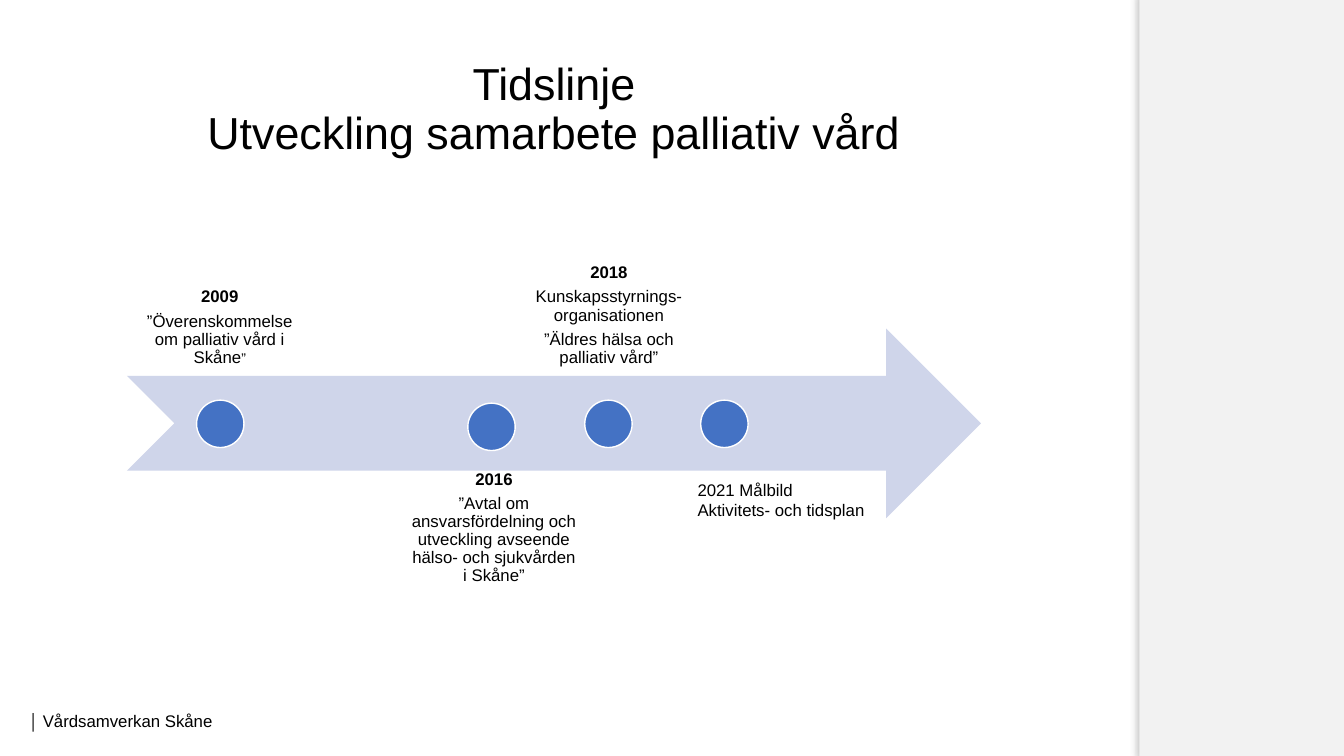
from lxml import etree
from pptx import Presentation
from pptx.dml.color import RGBColor
from pptx.enum.shapes import MSO_SHAPE
from pptx.enum.text import MSO_ANCHOR, PP_ALIGN
from pptx.oxml.ns import qn
from pptx.util import Inches, Pt

BLACK = RGBColor(0x00, 0x00, 0x00)
WHITE = RGBColor(0xFF, 0xFF, 0xFF)
PANEL_GREY = RGBColor(0xF2, 0xF2, 0xF2)
ARROW_BLUE = RGBColor(0xCF, 0xD5, 0xEA)
DOT_BLUE = RGBColor(0x44, 0x72, 0xC4)

RECTANGLE = MSO_SHAPE.RECTANGLE
ARROW = MSO_SHAPE.NOTCHED_RIGHT_ARROW
OVAL = MSO_SHAPE.OVAL
TOP, MIDDLE, BOTTOM = MSO_ANCHOR.TOP, MSO_ANCHOR.MIDDLE, MSO_ANCHOR.BOTTOM
CENTER = PP_ALIGN.CENTER

FONT = "Arial"
DOT_SIZE = 0.47
LABEL_SIZE = (1.84, 1.88)
LABEL_INSET = Inches(0.09)

# Label: left, top, anchor, year, then the paragraphs below the year
LABELS = [
    (0, -1.41, BOTTOM, "2009", ["”Överenskommelse om palliativ vård i Skåne”"]),
    (2.72, 1.32, TOP, "2016",
     ["”Avtal om ansvarsfördelning och utveckling avseende "
      "hälso- och sjukvården i Skåne”"]),
    (3.86, -1.41, BOTTOM, "2018",
     ["Kunskapsstyrnings-organisationen", "”Äldres hälsa och palliativ vård”"]),
]
DOTS = [(0.69, 0.71), (3.38, 0.74), (4.54, 0.71), (5.69, 0.71)]


def add_filled_shape(slide, kind, box, color):
    shape = slide.shapes.add_shape(kind, *(Inches(length) for length in box))
    shape.shadow.inherit = False
    shape.fill.solid()
    shape.fill.fore_color.rgb = color
    shape.line.fill.background()
    return shape


def add_text_frame(slide, box, anchor):
    frame = slide.shapes.add_textbox(*(Inches(length) for length in box)).text_frame
    frame.word_wrap = True
    frame.vertical_anchor = anchor
    return frame


def set_font(font, size, bold=False):
    font.name = FONT
    font.size = Pt(size)
    font.bold = bold
    font.color.rgb = BLACK


def add_side_panel(slide, box):
    panel = add_filled_shape(slide, RECTANGLE, box, PANEL_GREY)
    effects = panel._element.spPr.find(qn("a:effectLst"))
    shadow = etree.SubElement(effects, qn("a:outerShdw"), blurRad=str(Pt(11)),
                              dist=str(Pt(4)), dir="0", algn="ctr", rotWithShape="0")
    color = etree.SubElement(shadow, qn("a:srgbClr"), val=str(BLACK))
    etree.SubElement(color, qn("a:alpha"), val="90000")


def add_footer(slide, box):
    para = add_text_frame(slide, box, MIDDLE).paragraphs[0]
    for text, size, bold in [("│", 11, True), (" ", 10.5, False),
                             ("Vårdsamverkan Skåne", 12, False)]:
        span = para.add_run()
        span.text = text
        set_font(span.font, size, bold)


def add_title(slide, box):
    para = add_text_frame(slide, box, MIDDLE).paragraphs[0]
    para.text = "Tidslinje\vUtveckling samarbete palliativ vård"
    para.alignment = CENTER
    para.line_spacing = 0.9
    set_font(para.font, 32)


def add_label(slide, box, anchor, year, lines):
    frame = add_text_frame(slide, box, anchor)
    frame.margin_left = frame.margin_right = LABEL_INSET
    frame.margin_top = frame.margin_bottom = LABEL_INSET
    for index, text in enumerate([year, *lines]):
        para = frame.add_paragraph() if index else frame.paragraphs[0]
        para.alignment = CENTER
        para.line_spacing = 0.9
        para.space_after = Pt(4.2)
        set_font(para.font, 12, bold=index == 0)
        para.add_run().text = text
    return frame


def shrink_closing_quote(frame):
    para = frame.paragraphs[-1]
    sentence = para.runs[0]
    sentence.text = sentence.text[:-1]
    quote = para.add_run()
    quote.text = "”"
    quote.font.size = Pt(10)


def add_timeline(slide, box):
    left, top = box[:2]
    add_filled_shape(slide, ARROW, box, ARROW_BLUE)
    frames = [add_label(slide, (left + x, top + y, *LABEL_SIZE), anchor, year, lines)
              for x, y, anchor, year, lines in LABELS]
    shrink_closing_quote(frames[0])
    for x, y in DOTS:
        dot = add_filled_shape(
            slide, OVAL, (left + x, top + y, DOT_SIZE, DOT_SIZE), DOT_BLUE)
        dot.line.color.rgb = WHITE
        dot.line.width = Pt(1)
    goal = add_text_frame(slide, (left + 5.56, top + 1.45, 1.87, 0.5), TOP).paragraphs[0]
    goal.text = "2021 Målbild Aktivitets- och tidsplan"
    set_font(goal.font, 12)


def main():
    deck = Presentation()
    deck.slide_width, deck.slide_height = Inches(13.33), Inches(7.5)
    slide = deck.slides.add_slide(deck.slide_layouts[6])
    add_side_panel(slide, (11.3, -0.1, 2.04, 7.67))
    add_footer(slide, (0.19, 6.95, 3, 0.4))
    add_timeline(slide, (1.26, 3.26, 8.47, 1.88))
    add_title(slide, (1.26, 0.63, 8.47, 0.93))
    deck.save("out.pptx")


if __name__ == "__main__":
    main()
